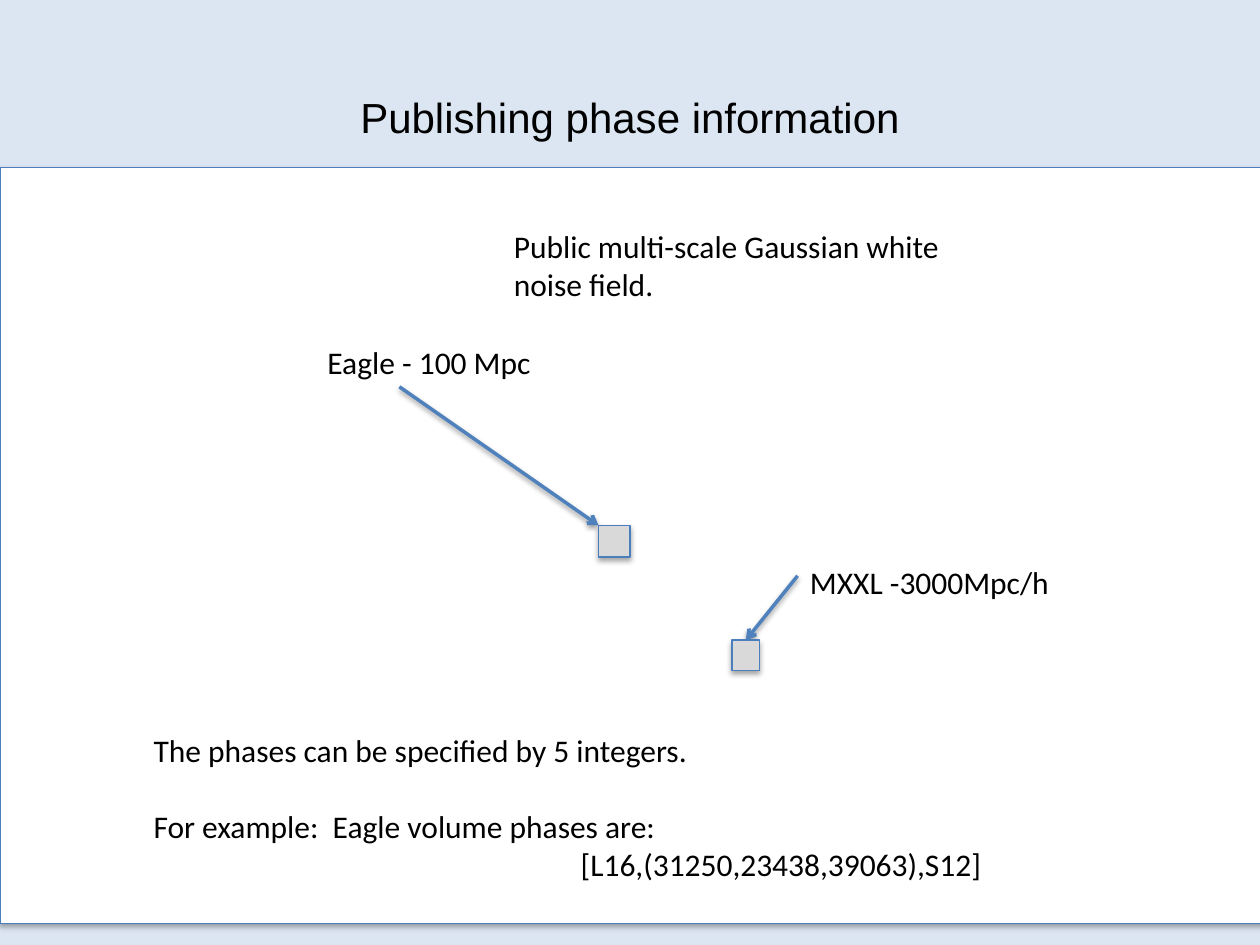
"""Build the slide on publishing phase information."""
from lxml import etree
from pptx import Presentation
from pptx import util as u
from pptx.dml.color import RGBColor
from pptx.enum import shapes, text
from pptx.oxml.ns import qn

COLORS = {
    "background": "DCE6F2",
    "panel": "FFFFFF",
    "volume": "D9D9D9",
    "outline": "4B7EBC",
    "arrow": "4F81BD",
    "ink": "000000",
}


def color(name):
    """Return the named colour."""
    return RGBColor.from_string(COLORS[name])


def inches(*lengths):
    """Convert several lengths to Inches."""
    return [u.Inches(length) for length in lengths]


def add_shadow(element, opacity, distance):
    """Give a shape or connector a soft shadow straight below it."""
    effects = etree.SubElement(element._element.spPr, qn("a:effectLst"))
    shadow = etree.SubElement(
        effects, qn("a:outerShdw"), blurRad=str(u.Pt(3.1)),
        dist=str(u.Pt(distance)), dir="5400000", rotWithShape="0")
    ink = etree.SubElement(shadow, qn("a:srgbClr"), val=COLORS["ink"])
    etree.SubElement(ink, qn("a:alpha"), val=str(opacity * 1000))


def add_box(slide, place, fill):
    """Add an outlined rectangle with a shadow."""
    box = slide.shapes.add_shape(
        shapes.MSO_SHAPE.RECTANGLE, *inches(*place))
    box.fill.solid()
    box.fill.fore_color.rgb = color(fill)
    box.line.color.rgb = color("outline")
    box.line.width = u.Pt(0.75)
    add_shadow(box, 35, 1.8)
    return box


def add_arrow(slide, start, end):
    """Add an arrow that points at its end."""
    arrow = slide.shapes.add_connector(
        shapes.MSO_CONNECTOR.STRAIGHT, *inches(*start, *end))
    arrow.line.color.rgb = color("arrow")
    arrow.line.width = u.Pt(2)
    etree.SubElement(arrow.line._get_or_add_ln(), qn("a:tailEnd"), type="arrow")
    add_shadow(arrow, 38, 1.6)
    return arrow


def add_text(slide, place, lines, size=18, font="Calibri"):
    """Add a wrapped text box and return its paragraphs."""
    frame = slide.shapes.add_textbox(*inches(*place)).text_frame
    frame.word_wrap = True
    for index, line in enumerate(lines):
        paragraph = frame.add_paragraph() if index else frame.paragraphs[0]
        run = paragraph.add_run()
        run.text = line
        run.font.size = u.Pt(size)
        run.font.name = font
        run.font.color.rgb = color("ink")
    return frame.paragraphs


def add_title(slide, title):
    """Add the centred slide title."""
    heading = add_text(slide, (0.5, 0.3, 9, 1.25), [title], 24, "Arial")[0]
    heading.alignment = text.PP_ALIGN.CENTER
    heading._parent.vertical_anchor = text.MSO_ANCHOR.MIDDLE


def add_phase_notes(slide):
    """Add the phase description with its indented example."""
    _, example, phases = add_text(slide, (1.12, 5.75, 6.92, 1.31), [
        "The phases can be specified by 5 integers.",
        "For example:  Eagle volume phases are:",
        "[L16,(31250,23438,39063),S12]",
    ])
    example.space_before = u.Pt(22)
    phases._p.get_or_add_pPr().set("marL", str(u.Inches(3.39)))


def main():
    """Build and save the slide."""
    deck = Presentation()
    deck.slide_width, deck.slide_height = inches(10, 7.5)
    slide = deck.slides.add_slide(deck.slide_layouts[6])
    slide.background.fill.solid()
    slide.background.fill.fore_color.rgb = color("background")

    add_title(slide, "Publishing phase information")
    add_box(slide, (0, 1.33, 10.25, 6), "panel")
    add_text(slide, (6.33, 4.42, 2.42, 0.4), ["MXXL -3000Mpc/h"])
    add_text(slide, (2.5, 2.67, 2.08, 0.4), ["Eagle - 100 Mpc"])
    mxxl_arrow = add_arrow(slide, (6.33, 4.57), (5.92, 5.08))
    add_arrow(slide, (3.17, 3.07), (4.75, 4.17))
    mxxl_volume = add_box(slide, (5.81, 5.08, 0.22, 0.24), "volume")
    mxxl_arrow.end_connect(mxxl_volume, 0)
    add_box(slide, (4.75, 4.17, 0.25, 0.25), "volume")
    add_text(slide, (3.98, 1.75, 3.67, 0.71),
             ["Public multi-scale Gaussian white noise field."])
    add_phase_notes(slide)
    deck.save("out.pptx")


if __name__ == "__main__":
    main()
